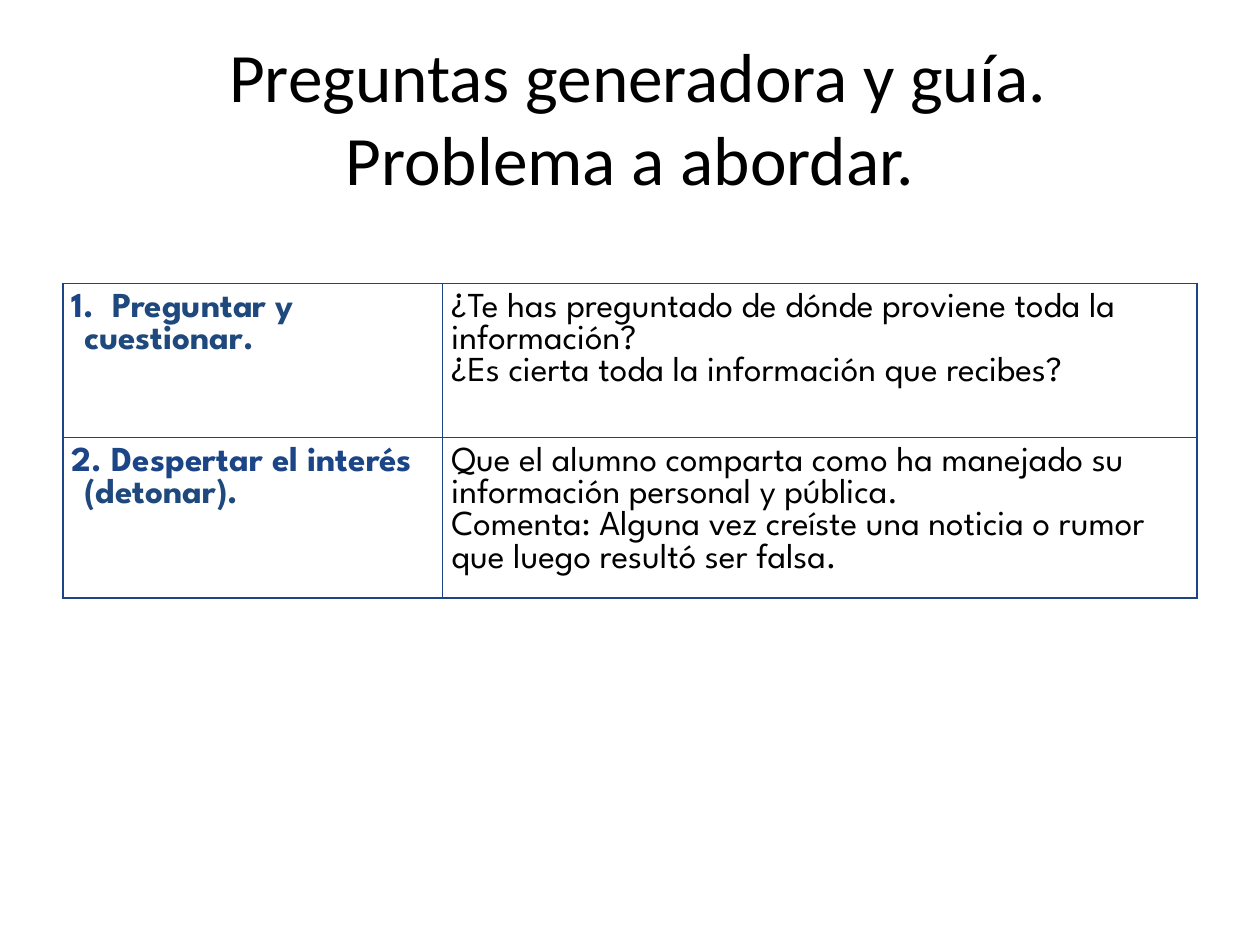
from dataclasses import dataclass

from lxml import etree
from pptx import Presentation
from pptx.dml.color import RGBColor
from pptx.enum.text import MSO_ANCHOR, PP_ALIGN
from pptx.oxml.ns import qn
from pptx.util import Cm, Pt

CENTER = PP_ALIGN.CENTER
MIDDLE = MSO_ANCHOR.MIDDLE
TITLE_ONLY = 5


@dataclass(frozen=True)
class Theme:
    text: str = "000000"
    number: str = "1C4587"
    label: str = "1F497D"
    border: str = "1C4587"
    title_font: str = "Calibri"
    table_font: str = "League Spartan"
    title_size: float = 39.6
    table_size: float = 20
    border_width: float = 1


class SlideBuilder:
    def __init__(self, slide, theme):
        self.slide = slide
        self.theme = theme

    def title(self, wording, left, top, width, height):
        title = self.slide.shapes.title
        title.left, title.top = Cm(left), Cm(top)
        title.width, title.height = Cm(width), Cm(height)
        title.text_frame.vertical_anchor = MIDDLE
        title.text_frame.text = wording
        heading = title.text_frame.paragraphs[0]
        heading.alignment = CENTER
        self.font(heading, self.theme.title_font, self.theme.title_size)
        heading.font.color.rgb = RGBColor.from_string(self.theme.text)

    def table(self, rows, left, top, column_widths, row_heights):
        """Draw rows of (label runs, paragraphs), with a label run as (words, colour)."""
        table = self.slide.shapes.add_table(
            len(rows), len(column_widths), Cm(left), Cm(top),
            Cm(sum(column_widths)), Cm(sum(row_heights))).table
        table.first_row = table.horz_banding = False
        for column, width in zip(table.columns, column_widths):
            column.width = Cm(width)
        for row, height, (label, questions) in zip(table.rows, row_heights, rows):
            row.height = Cm(height)
            label_cell, question_cell = row.cells
            self.cell(label_cell, [label], bold=True, hanging=True)
            self.cell(question_cell,
                      [[(question, self.theme.text)] for question in questions])

    def cell(self, cell, paragraphs, bold=False, hanging=False):
        cell.margin_left = cell.margin_right = Cm(0.18)
        cell.margin_top = cell.margin_bottom = Cm(0.18)
        self.borders(cell)
        cell.fill.background()
        frame = cell.text_frame
        for index, runs in enumerate(paragraphs):
            paragraph = frame.add_paragraph() if index else frame.paragraphs[0]
            self.font(paragraph, self.theme.table_font, self.theme.table_size, bold)
            if hanging:
                properties = paragraph._p.get_or_add_pPr()
                properties.set("marL", str(Cm(0.25)))
                properties.set("indent", str(Cm(-0.51)))
            for words, color in runs:
                run = paragraph.add_run()
                run.text = words
                run.font.color.rgb = RGBColor.from_string(color)

    def borders(self, cell):
        properties = cell._tc.get_or_add_tcPr()
        for side in ("a:lnL", "a:lnR", "a:lnT", "a:lnB"):
            line = etree.SubElement(properties, qn(side),
                                    w=str(Pt(self.theme.border_width)))
            fill = etree.SubElement(line, qn("a:solidFill"))
            etree.SubElement(fill, qn("a:srgbClr"), val=self.theme.border)

    @staticmethod
    def font(paragraph, name, size, bold=False):
        paragraph.font.name = name
        paragraph.font.size = Pt(size)
        paragraph.font.bold = bold


def main():
    theme = Theme()
    presentation = Presentation()
    presentation.slide_width, presentation.slide_height = Cm(25.4), Cm(19.05)
    slide = presentation.slides.add_slide(presentation.slide_layouts[TITLE_ONLY])
    builder = SlideBuilder(slide, theme)

    builder.title(" Preguntas generadora y guía. Problema a abordar.",
                  1.27, 0.76, 22.86, 3.18)
    stages = [
        ([("1.  ", theme.number), ("Preguntar y cuestionar.", theme.label)],
         ["¿Te has preguntado de dónde proviene toda la información?",
          "¿Es cierta toda la información que recibes?"]),
        ([("2. Despertar el interés ", theme.number), ("(detonar).", theme.label)],
         ["Que el alumno comparta como ha manejado su información personal y pública.",
          "Comenta: Alguna vez creíste una noticia o rumor que luego resultó ser falsa."]),
    ]
    builder.table(stages, 1.27, 5.72, [7.65, 15.21], [3.1, 3.23])
    presentation.save("out.pptx")


if __name__ == "__main__":
    main()
